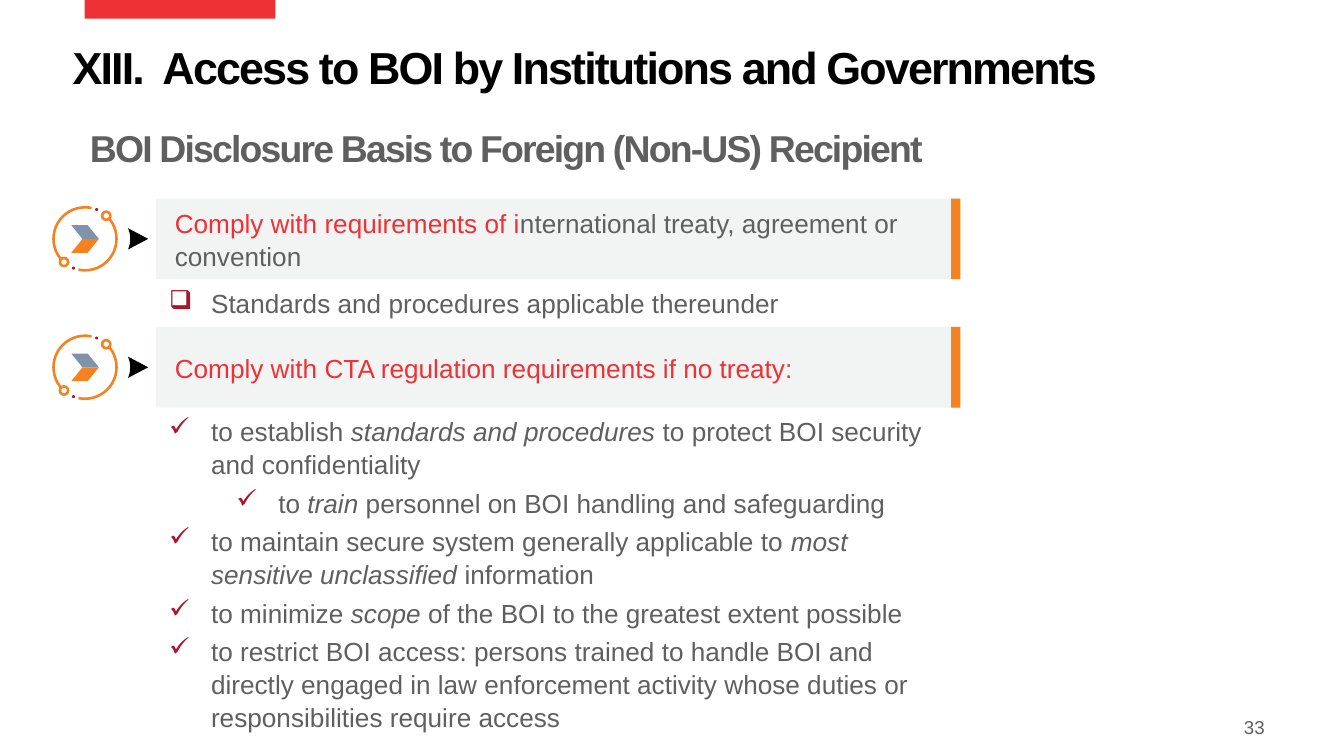
from lxml import etree
from pptx import Presentation
from pptx.dml.color import RGBColor
from pptx.enum.shapes import MSO_SHAPE
from pptx.enum.text import MSO_ANCHOR, PP_ALIGN
from pptx.oxml.ns import qn
from pptx.util import Pt

RECT, OVAL, ARC = MSO_SHAPE.RECTANGLE, MSO_SHAPE.OVAL, MSO_SHAPE.ARC
TOP, MID = MSO_ANCHOR.TOP, MSO_ANCHOR.MIDDLE
LEFT, RIGHT = PP_ALIGN.LEFT, PP_ALIGN.RIGHT

RED = RGBColor(0xEE, 0x31, 0x35)
GREY = RGBColor(0x5F, 0x5F, 0x5F)
PALE = RGBColor(0xF2, 0xF3, 0xF3)
ORANGE = RGBColor(0xF5, 0x82, 0x20)
WINE = RGBColor(0xAE, 0x13, 0x2A)
STEEL = RGBColor(0x7F, 0x93, 0xAA)
BLACK = RGBColor(0, 0, 0)
FONT = "Arial"

# Headings: text, left, top, size, colour
HEADS = [
    ("XIII.  Access to BOI by Institutions and Governments", 38.9, 24.5, 24, BLACK),
    ("BOI Disclosure Basis to Foreign (Non-US) Recipient", 48.2, 69.8, 20, GREY),
]

# Rows: bar runs (text, colour), bullet sign, list height, items
# Item: level, runs (text, italic)
ROWS = [
    ([("Comply with requirements of i", RED),
      ("nternational treaty, agreement or convention", GREY)],
     "❑", 24.5,
     [(0, [("Standards and procedures applicable thereunder", False)])]),
    ([("Comply with CTA regulation requirements if no treaty:", RED)],
     "✓", 172,
     [(0, [("to establish ", False), ("standards and procedures ", True),
           ("to protect BOI security and confidentiality", False)]),
      (1, [("to ", False), ("train", True),
           (" personnel on BOI handling and safeguarding", False)]),
      (0, [("to maintain secure system generally applicable to ", False),
           ("most sensitive unclassified ", True), ("information", False)]),
      (0, [("to minimize ", False), ("scope", True),
           (" of the BOI to the greatest extent possible", False)]),
      (0, [("to restrict BOI access: persons trained to handle BOI and directly "
            "engaged in law enforcement activity whose duties or "
            "responsibilities require access", False)])]),
]

# Row grid
ROW_TOP, STEP, BAR_H = 106.4, 68.8, 43.2
BAR_X, BAR_W, EDGE_W = 83.5, 431, 5
ICON_X = 45.6

# Outlines, relative to the icon centre
UPPER = [(-7.4, -7.4), (1.4, -7.4), (7.4, 0), (-1.4, 0)]
LOWER = [(x, -y) for x, y in UPPER]
ARROW = [(23, -5.7), (33.8, 0), (23, 5.7), (23.9, 3), (24.2, 0), (23.9, -3)]

prs = Presentation()
prs.slide_width, prs.slide_height = Pt(720), Pt(405)
slide = prs.slides.add_slide(prs.slide_layouts[6])
shapes = slide.shapes


def paint(shape, fill=None, line=None):
    shape.shadow.inherit = False
    if fill is None:
        shape.fill.background()
    else:
        shape.fill.solid()
        shape.fill.fore_color.rgb = fill
    if line is None:
        shape.line.fill.background()
    else:
        shape.line.color.rgb = line
        shape.line.width = Pt(1.4)
    return shape


def add(kind, x, y, w, h, fill=None, line=None):
    return paint(shapes.add_shape(kind, Pt(x), Pt(y), Pt(w), Pt(h)), fill, line)


def disc(x, y, r, fill=None, line=None, kind=OVAL):
    return add(kind, x - r, y - r, 2 * r, 2 * r, fill, line)


def outline(points, x, y, fill):
    pts = [(Pt(x + dx), Pt(y + dy)) for dx, dy in points]
    form = shapes.build_freeform(*pts[0])
    form.add_line_segments(pts[1:], close=True)
    paint(form.convert_to_shape(), fill)


def frame(shape, pads=(0, 0, 0, 0), anchor=TOP):
    tf = shape.text_frame
    tf.word_wrap = True
    tf.vertical_anchor = anchor
    (tf.margin_left, tf.margin_top,
     tf.margin_right, tf.margin_bottom) = [Pt(p) for p in pads]
    return tf


def box(x, y, w, h, *args):
    return frame(shapes.add_textbox(Pt(x), Pt(y), Pt(w), Pt(h)), *args)


def write(par, text, size, color, bold=False, slant=False):
    run = par.add_run()
    run.text = text
    font = run.font
    font.name, font.size, font.bold, font.italic = FONT, Pt(size), bold, slant
    font.color.rgb = color
    return run


def indent(par, left, first=0):
    props = par._p.get_or_add_pPr()
    props.set("marL", str(Pt(left)))
    props.set("indent", str(Pt(first)))
    return props


def bullet(par, sign, left):
    props = indent(par, left, -22.5)
    tint = etree.SubElement(props, qn("a:buClr"))
    etree.SubElement(tint, qn("a:srgbClr"), val=str(WINE))
    etree.SubElement(props, qn("a:buChar"), char=sign)


def icon(x, y):
    # Two half rings, each with a node and a dot, turned half a circle apart
    for side, start, end in [(-1, 140, 282), (1, 320, 102)]:
        ring = disc(x, y, 16.9, line=ORANGE, kind=ARC)
        ring.adjustments[0] = start * 0.6
        ring.adjustments[1] = end * 0.6
        disc(x + side * 11.3, y - side * 12.4, 2.2, line=ORANGE)
        disc(x + side * 6.2, y - side * 15.7, 0.8, WINE)
    outline(UPPER, x, y, STEEL)
    outline(LOWER, x, y, ORANGE)


# Top tab and page number
add(RECT, 45.3, 0, 102.3, 10, RED)
par = box(613.4, 381.6, 64.1, 15.8, (0, 0, 0, 0), MID).paragraphs[0]
par.alignment = RIGHT
write(par, "33", 10, GREY)

# Headings
for text, x, y, size, color in HEADS:
    par = box(x, y, 633, 36).paragraphs[0]
    par.line_spacing = 0.9
    run = write(par, text, size, color, bold=True)
    run.font._element.set("spc", "-100")

# Rows: icon, arrow, bar and list
for i, (runs, sign, height, items) in enumerate(ROWS):
    top = ROW_TOP + i * STEP
    mid = top + BAR_H / 2
    icon(ICON_X, mid)
    outline(ARROW, ICON_X, mid, BLACK)

    bar = add(RECT, BAR_X, top, BAR_W, BAR_H, PALE)
    par = frame(bar, (2.2, 2.2, 0, 2.2), MID).paragraphs[0]
    par.alignment = LEFT
    par.line_spacing = 1.05
    indent(par, 7.9)
    for text, color in runs:
        write(par, text, 14, color)
    add(RECT, BAR_X + BAR_W - EDGE_W, top, EDGE_W, BAR_H, ORANGE)

    tf = box(BAR_X, top + BAR_H, BAR_W + 1, height, (7.2, 3.6, 7.2, 3.6))
    for n, (level, parts) in enumerate(items):
        par = tf.add_paragraph() if n else tf.paragraphs[0]
        par.level = level
        par.line_spacing = 1.05
        par.space_after = Pt(3)
        bullet(par, sign, 22.5 + 36 * level)
        for text, slant in parts:
            write(par, text, 14, GREY, slant=slant)

prs.save("out.pptx")
